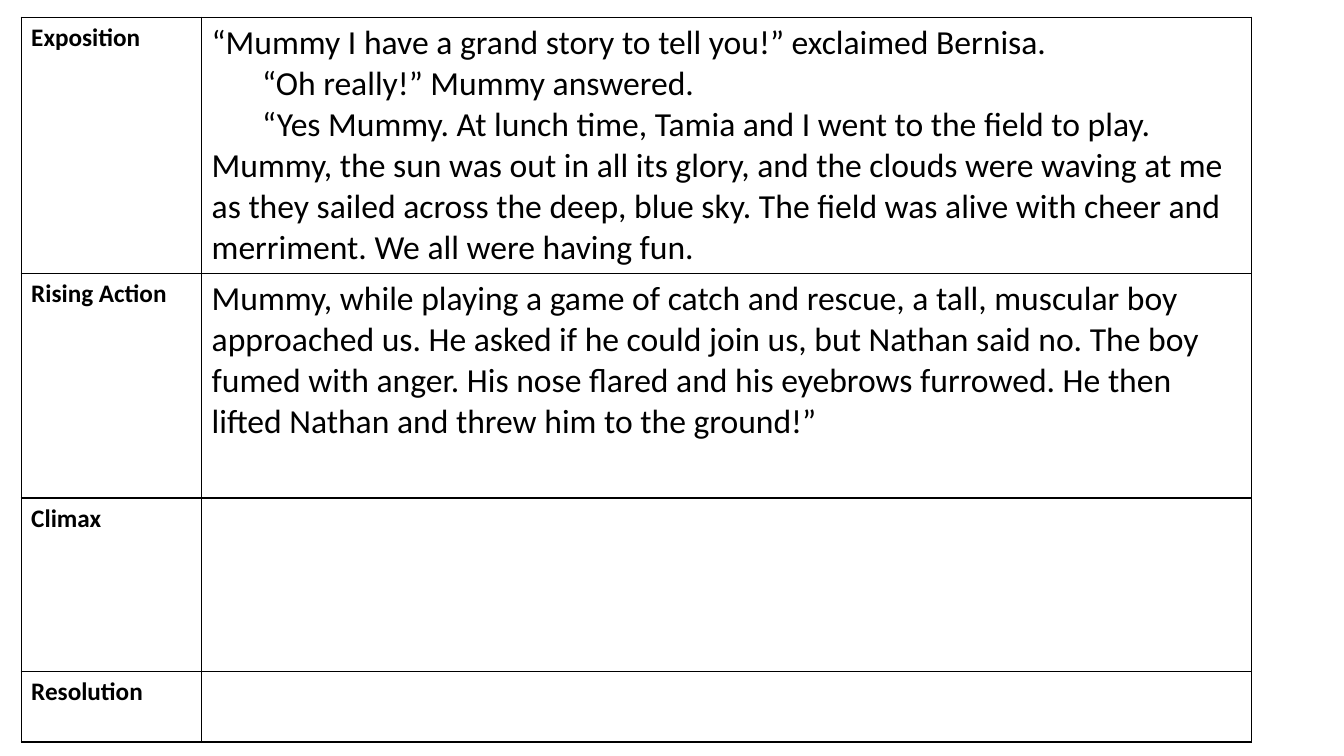
"""Builds a slide with a story plan table: four plot stages and their text."""
from lxml.etree import SubElement
from pptx import Presentation
from pptx.dml.color import RGBColor
from pptx.oxml.ns import qn
from pptx.util import Pt

PX = 9144
BLACK = RGBColor(0x00, 0x00, 0x00)
FONT = "Calibri"
COLUMN_WIDTHS = [179, 1041]
STAGES = [
    ("Exposition", 240, [
        "“Mummy I have a grand story to tell you!” exclaimed Bernisa.",
        "\t“Oh really!” Mummy answered.",
        "\t“Yes Mummy. At lunch time, Tamia and I went to the field to play. "
        "Mummy, the sun was out in all its glory, and the clouds were waving at me "
        "as they sailed across the deep, blue sky. The field was alive with cheer "
        "and merriment. We all were having fun.",
    ]),
    ("Rising Action", 223, [
        "Mummy, while playing a game of catch and rescue, a tall, muscular boy "
        "approached us. He asked if he could join us, but Nathan said no. The boy "
        "fumed with anger. His nose flared and his eyebrows furrowed. He then "
        "lifted Nathan and threw him to the ground!”",
    ]),
    ("Climax", 172, []),
    ("Resolution", 70, []),
]


def write_paragraph(para, text, size=24, bold=False):
    span = para.add_run()
    span.text = text
    span.font.name = FONT
    span.font.size = Pt(size)
    span.font.bold = bold
    span.font.color.rgb = BLACK


def add_borders(cell):
    properties = cell._tc.get_or_add_tcPr()
    for side in ("a:lnL", "a:lnR", "a:lnT", "a:lnB"):
        line = SubElement(properties, qn(side), w=str(Pt(1)))
        fill = SubElement(line, qn("a:solidFill"))
        SubElement(fill, qn("a:srgbClr"), val=str(BLACK))


deck = Presentation()
deck.slide_width = 1333 * PX
deck.slide_height = 750 * PX
page = deck.slides.add_slide(deck.slide_layouts[6])

table_height = sum(height for _, height, _ in STAGES)
table = page.shapes.add_table(
    len(STAGES), len(COLUMN_WIDTHS),
    21 * PX, 17 * PX, sum(COLUMN_WIDTHS) * PX, table_height * PX,
).table
table.first_row = False
table.horz_banding = False

for column, width in zip(table.columns, COLUMN_WIDTHS):
    column.width = width * PX

for row, (stage, height, story) in zip(table.rows, STAGES):
    row.height = height * PX
    stage_cell, story_cell = row.cells
    for cell in (stage_cell, story_cell):
        add_borders(cell)
        cell.fill.background()
    write_paragraph(stage_cell.text_frame.paragraphs[0], stage, size=18, bold=True)
    frame = story_cell.text_frame
    for index, text in enumerate(story):
        para = frame.add_paragraph() if index else frame.paragraphs[0]
        write_paragraph(para, text)

deck.save("out.pptx")
